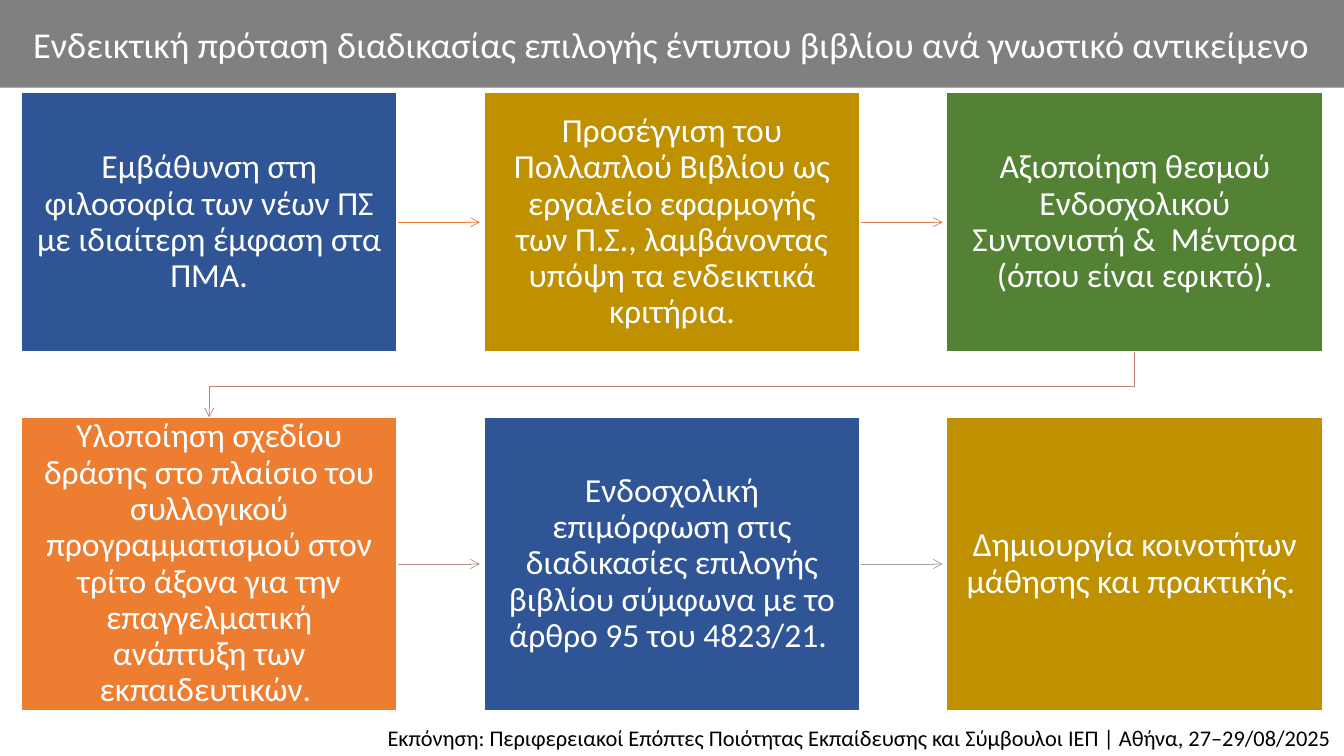
"""Build a slide with a six-step process for choosing a printed textbook."""
import pptx
import pptx.dml.color
import pptx.enum.shapes
import pptx.enum.text
import pptx.util
from lxml import etree
from pptx.oxml.ns import qn

Inches = pptx.util.Inches
Align = pptx.enum.text.PP_ALIGN
Anchor = pptx.enum.text.MSO_ANCHOR

TITLE = "Ενδεικτική πρόταση διαδικασίας επιλογής έντυπου βιβλίου ανά γνωστικό αντικείμενο"
FOOTER = ("Εκπόνηση: Περιφερειακοί Επόπτες Ποιότητας Εκπαίδευσης και Σύμβουλοι ΙΕΠ"
          " | Αθήνα, 27–29/08/2025")
STEPS = [
    ("Εμβάθυνση στη φιλοσοφία των νέων ΠΣ με ιδιαίτερη έμφαση στα ΠΜΑ.", "2F5597"),
    ("Προσέγγιση του Πολλαπλού Βιβλίου ως εργαλείο εφαρμογής των Π.Σ., "
     "λαμβάνοντας υπόψη τα ενδεικτικά κριτήρια.", "BF9000"),
    ("Αξιοποίηση θεσμού Ενδοσχολικού Συντονιστή &  Μέντορα (όπου είναι εφικτό).", "548235"),
    ("Υλοποίηση σχεδίου δράσης στο πλαίσιο του συλλογικού προγραμματισμού στον "
     "τρίτο άξονα για την επαγγελματική ανάπτυξη των εκπαιδευτικών. ", "ED7D31"),
    ("Ενδοσχολική επιμόρφωση στις διαδικασίες επιλογής βιβλίου σύμφωνα με το "
     "άρθρο 95 του 4823/21. ", "2F5597"),
    ("Δημιουργία κοινοτήτων μάθησης και πρακτικής. ", "BF9000"),
]
ARROW_COLORS = ["ED7D31", "D87A51", "C48170", "B4908B", "A5A5A5"]
ROWS = [(0.92, 2.57), (4.14, 2.91)]
COLUMNS = 3
LEFT, WIDTH, PITCH = 0.21, 3.73, 4.59
ARROW_LENGTH, TURN_Y = 0.82, 3.83


def color(value):
    return pptx.dml.color.RGBColor.from_string(value)


def add_box(page, place, text, fill, size, ink="FFFFFF", align=Align.CENTER,
            anchor=Anchor.MIDDLE, spacing=1.0, insets=(0.1, 0.05), border=None):
    box = page.shapes.add_shape(pptx.enum.shapes.MSO_SHAPE.RECTANGLE, *map(Inches, place))
    box.shadow.inherit = False
    box.fill.solid()
    box.fill.fore_color.rgb = color(fill)
    if border:
        box.line.color.rgb = color(border)
        box.line.width = pptx.util.Pt(1)
    else:
        box.line.fill.background()
    frame = box.text_frame
    frame.word_wrap = True
    frame.vertical_anchor = anchor
    frame.margin_left = frame.margin_right = Inches(insets[0])
    frame.margin_top = frame.margin_bottom = Inches(insets[1])
    frame.text = text
    para = frame.paragraphs[0]
    para.alignment = align
    para.line_spacing = spacing
    font = para.runs[0].font
    font.name, font.size, font.color.rgb = "Calibri", pptx.util.Pt(size), color(ink)


def style_arrow(arrow, tint):
    arrow.line.color.rgb = color(tint)
    arrow.line.width = pptx.util.Pt(0.5)
    properties = arrow.element.spPr
    etree.SubElement(properties.find(qn("a:ln")), qn("a:tailEnd"), type="arrow")
    etree.SubElement(properties, qn("a:effectLst"))


def add_straight_arrow(page, x, y, tint):
    arrow = page.shapes.add_connector(
        pptx.enum.shapes.MSO_CONNECTOR.STRAIGHT,
        Inches(x), Inches(y), Inches(x + ARROW_LENGTH), Inches(y))
    style_arrow(arrow, tint)


def add_turning_arrow(page, points, tint):
    corners = [(Inches(x), Inches(y)) for x, y in points]
    builder = page.shapes.build_freeform(*corners[0])
    builder.add_line_segments(corners[1:], close=False)
    arrow = builder.convert_to_shape()
    arrow.fill.background()
    style_arrow(arrow, tint)


def main():
    deck = pptx.Presentation()
    deck.slide_width, deck.slide_height = Inches(13.33), Inches(7.5)
    page = deck.slides.add_slide(deck.slide_layouts[6])
    add_box(page, (0, 0, 13.33, 0.87), TITLE, "808080", 26)

    places = [(LEFT + column * PITCH, top, WIDTH, height)
              for top, height in ROWS for column in range(COLUMNS)]
    for index, tint in enumerate(ARROW_COLORS):
        x, y, width, height = places[index]
        if index % COLUMNS < COLUMNS - 1:
            add_straight_arrow(page, x + width, y + height / 2, tint)
        else:
            start, end = x + width / 2, LEFT + WIDTH / 2
            add_turning_arrow(page, [(start, y + height), (start, TURN_Y),
                                     (end, TURN_Y), (end, ROWS[1][0])], tint)
    for place, (text, fill) in zip(places, STEPS):
        add_box(page, place, text, fill, 24, spacing=0.9, insets=(0.15, 0.16), border="FFFFFF")

    add_box(page, (0.03, 7.11, 13.27, 0.39), FOOTER, "FFFFFF", 16, ink="000000",
            align=Align.RIGHT, anchor=Anchor.TOP, spacing=1.1)
    deck.save("out.pptx")


if __name__ == "__main__":
    main()
